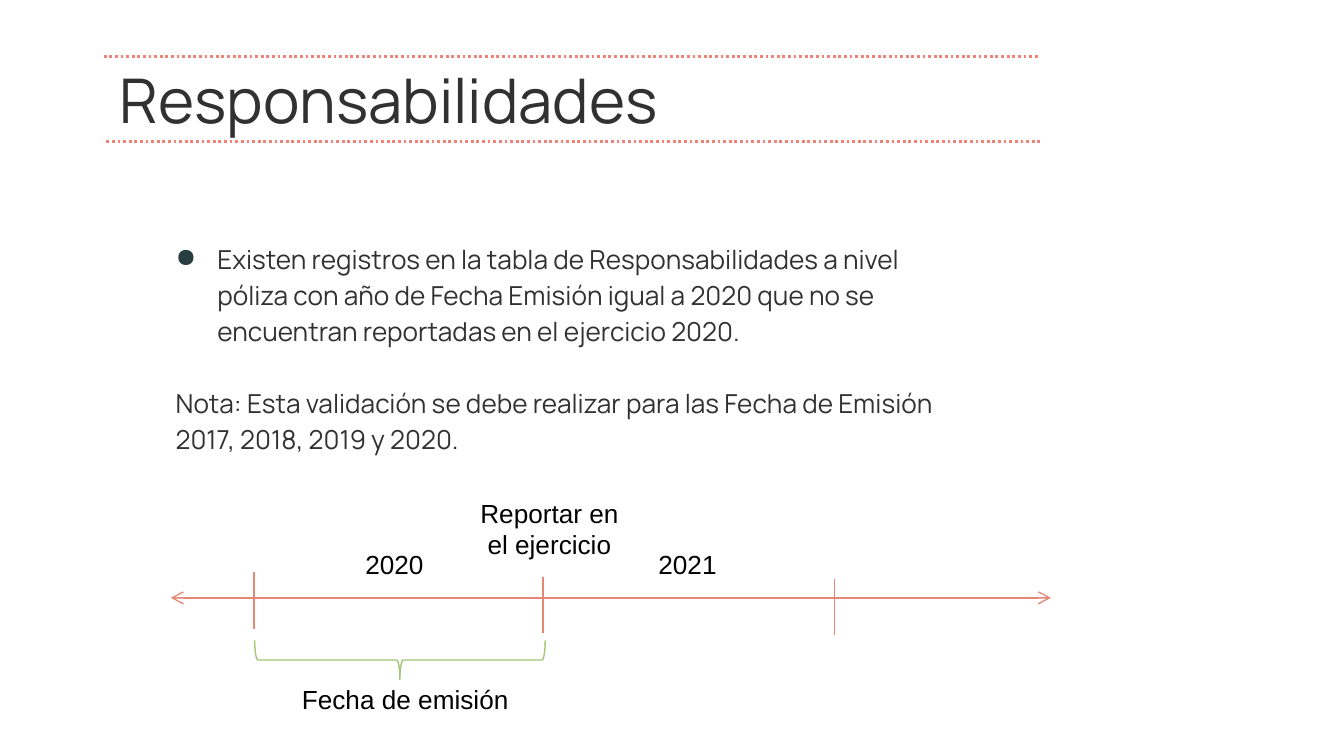
from lxml import etree
from pptx import Presentation
from pptx.dml.color import RGBColor
from pptx.enum.dml import MSO_LINE
from pptx.enum.shapes import MSO_CONNECTOR, MSO_SHAPE
from pptx.enum.text import MSO_ANCHOR, PP_ALIGN
from pptx.oxml.ns import qn
from pptx.util import Cm, Pt

STRAIGHT = MSO_CONNECTOR.STRAIGHT
BRACE = MSO_SHAPE.LEFT_BRACE
DOTS = MSO_LINE.ROUND_DOT
MIDDLE = MSO_ANCHOR.MIDDLE
TOP = MSO_ANCHOR.TOP
CENTER = PP_ALIGN.CENTER
LEFT = PP_ALIGN.LEFT

# Content: lengths in cm
COLORS = {"text": "313131", "label": "000000", "bullet": "273D40",
          "rule": "EE8479", "axis": "E68675", "brace": "A4C676"}
TITLE = "Responsabilidades"
BODY = [
    "Existen registros en la tabla de Responsabilidades a nivel póliza con año "
    "de Fecha Emisión igual a 2020 que no se encuentran reportadas en el "
    "ejercicio 2020.",
    "Nota: Esta validación se debe realizar para las Fecha de Emisión "
    "2017, 2018, 2019 y 2020.",
]
RULES = [(1.96, 19.63, 1.07), (2.01, 19.71, 2.67)]  # left, right, y
AXIS = (3.23, 19.86, 11.3)
TICKS = [(4.8, 10.82), (10.26, 10.9), (15.77, 10.94)]  # x, top
TICK = 1.07
LABELS = [  # text, left, top, width, height
    ("Fecha de emisión", 4.8, 12.8, 5.72, 0.86),
    ("2021", 11.71, 10.24, 2.57, 0.86),
    ("2020", 6.17, 10.24, 2.57, 0.86),
    ("Reportar en el ejercicio", 8.81, 9.27, 3.15, 1.45),
]


def rgb(name):
    return RGBColor.from_string(COLORS[name])


def add_text(slide, box, lines, size, font, color, anchor=TOP, align=LEFT):
    frame = slide.shapes.add_textbox(*map(Cm, box)).text_frame
    frame.word_wrap = True
    frame.vertical_anchor = anchor
    frame.text = "\n".join(lines)
    for para in frame.paragraphs:
        para.alignment = align
        para.font.size = Pt(size)
        para.font.name = font
        para.font.color.rgb = rgb(color)
    return frame


def add_line(slide, x1, y1, x2, y2, color, width):
    line = slide.shapes.add_connector(STRAIGHT, *map(Cm, (x1, y1, x2, y2)))
    line.line.color.rgb = rgb(color)
    line.line.width = Pt(width)
    etree.SubElement(line._element.spPr, qn("a:effectLst"))
    return line.line


def add_bullet(para):
    props = para._p.get_or_add_pPr()
    props.set("marL", str(Cm(0.79)))
    props.set("indent", str(-Cm(0.79)))
    tint = etree.SubElement(props, qn("a:buClr"))
    etree.SubElement(tint, qn("a:srgbClr"), val=COLORS["bullet"])
    etree.SubElement(props, qn("a:buChar"), char="●")


deck = Presentation()
deck.slide_width, deck.slide_height = Cm(25.4), Cm(14.29)
slide = deck.slides.add_slide(deck.slide_layouts[6])

# Title between dotted rules
head = add_text(slide, (2.01, 1.07, 17.63, 1.6), [TITLE], 33, "Manrope",
                "text", MIDDLE)
head.margin_top = head.margin_bottom = Cm(0.25)
for left, right, y in RULES:
    add_line(slide, left, y, right, y, "rule", 1.5).dash_style = DOTS

# Body
body = add_text(slide, (3.07, 3.89, 14.99, 5.33), BODY, 14, "Manrope",
                "text", MIDDLE)
body.margin_top = body.margin_bottom = Cm(0.25)
for para in body.paragraphs:
    para.line_spacing = 1.15
first = body.paragraphs[0]
first.space_after = Pt(19.3)
add_bullet(first)

# Timeline
left, right, y = AXIS
axis = add_line(slide, left, y, right, y, "axis", 0.75)
for end in ("a:headEnd", "a:tailEnd"):
    etree.SubElement(axis._get_or_add_ln(), qn(end), type="arrow")
for x, top in TICKS:
    add_line(slide, x, top, x, top + TICK, "axis", 0.75)

# Brace under the first year
brace = slide.shapes.add_shape(BRACE, Cm(7.19), Cm(9.73), Cm(0.74), Cm(5.49))
brace.rotation = 270
brace.shadow.inherit = False
brace.fill.background()
brace.line.color.rgb = rgb("brace")
brace.line.width = Pt(0.75)

# Labels
for text, *box in LABELS:
    add_text(slide, box, [text], 14, "Arial", "label", align=CENTER)

deck.save("out.pptx")
